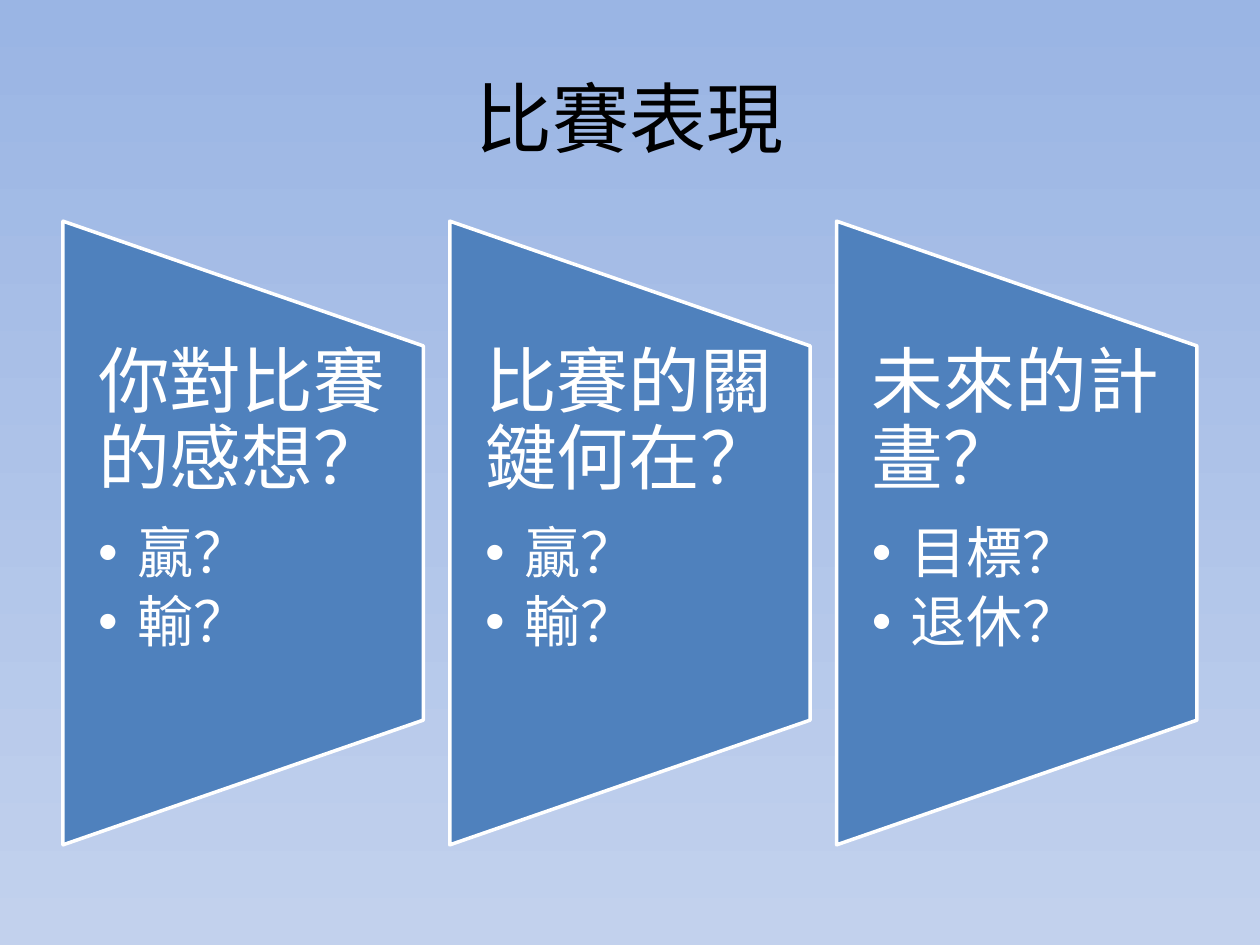
from lxml import etree
from pptx import Presentation
from pptx.dml.color import RGBColor
from pptx.enum.shapes import MSO_SHAPE
from pptx.enum.text import MSO_ANCHOR, PP_ALIGN
from pptx.oxml.ns import qn
from pptx.util import Inches, Pt

PANEL = MSO_SHAPE.FLOWCHART_MANUAL_OPERATION
TOP, MIDDLE = MSO_ANCHOR.TOP, MSO_ANCHOR.MIDDLE
LEFT, CENTER = PP_ALIGN.LEFT, PP_ALIGN.CENTER

TITLE = "比賽表現"
TOPICS = [
    ("你對比賽的感想？", ["贏？", "輸？"]),
    ("比賽的關鍵何在？", ["贏？", "輸？"]),
    ("未來的計畫？", ["目標？", "退休？"]),
]

THEME = {
    "sky": ("9AB5E4", "C2D1ED"),
    "panel": "4F81BD",
    "white": "FFFFFF",
    "black": "000000",
    "title": 44,
    "head": 41,
    "item": 32,
}

START, STEP = 0.5, 3.07
WIDE, TALL = 2.86, 4.95
MID = 4.23
TEXT_TOP, TEXT_TALL = 2.74, 2.97
INDENT = 0.31


def rgb(name):
    return RGBColor.from_string(THEME.get(name, name))


def add_box(slide, left, top, width, height, inset, anchor):
    box = slide.shapes.add_textbox(*map(Inches, (left, top, width, height)))
    frame = box.text_frame
    frame.word_wrap = True
    frame.vertical_anchor = anchor
    frame.margin_left = frame.margin_right = Inches(inset[0])
    frame.margin_top = frame.margin_bottom = Inches(inset[1])
    return frame


def add_text(frame, text, size, color="white", font="Calibri", align=LEFT,
             lines=0.9, before=0, bullet=False):
    first = frame.paragraphs[0]
    para = frame.add_paragraph() if first.runs else first
    if bullet:
        props = para._p.get_or_add_pPr()
        props.set("marL", str(Inches(INDENT)))
        props.set("indent", str(-Inches(INDENT)))
        tint = etree.SubElement(props, qn("a:buClr"))
        etree.SubElement(tint, qn("a:srgbClr"), val=THEME[color])
        etree.SubElement(props, qn("a:buFont"), typeface="Arial")
        etree.SubElement(props, qn("a:buChar"), char="•")
        para.level = 1
    para.alignment = align
    para.line_spacing = lines
    if before:
        para.space_before = Pt(before)
    run = para.add_run()
    run.text = text
    run.font.name = font
    run.font.size = Pt(THEME[size])
    run.font.color.rgb = rgb(color)


def add_panel(slide, left):
    shape = slide.shapes.add_shape(
        PANEL, Inches(left + (WIDE - TALL) / 2), Inches(MID - WIDE / 2),
        Inches(TALL), Inches(WIDE))
    shape.rotation = 270
    shape.shadow.inherit = False
    shape.fill.solid()
    shape.fill.fore_color.rgb = rgb("panel")
    shape.line.color.rgb = rgb("white")
    shape.line.width = Pt(2)


def add_topic(slide, left, head, items):
    add_panel(slide, left)
    frame = add_box(slide, left, TEXT_TOP, WIDE, TEXT_TALL, (0.28, 0), TOP)
    add_text(frame, head, "head")
    for i, item in enumerate(items):
        add_text(frame, item, "item", before=4.8 if i else 14.3, bullet=True)


def main():
    deck = Presentation()
    deck.slide_width, deck.slide_height = Inches(10), Inches(7.5)
    slide = deck.slides.add_slide(deck.slide_layouts[6])

    fill = slide.background.fill
    fill.gradient()
    fill.gradient_angle = 270
    for stop, color in zip(fill.gradient_stops, THEME["sky"]):
        stop.color.rgb = rgb(color)

    frame = add_box(slide, 0.5, 0.3, 9, 1.25, (0.1, 0.05), MIDDLE)
    add_text(frame, TITLE, "title", color="black", font="Arial",
             align=CENTER, lines=1.0)
    for i, (head, items) in enumerate(TOPICS):
        add_topic(slide, START + i * STEP, head, items)

    deck.save("out.pptx")


if __name__ == "__main__":
    main()
